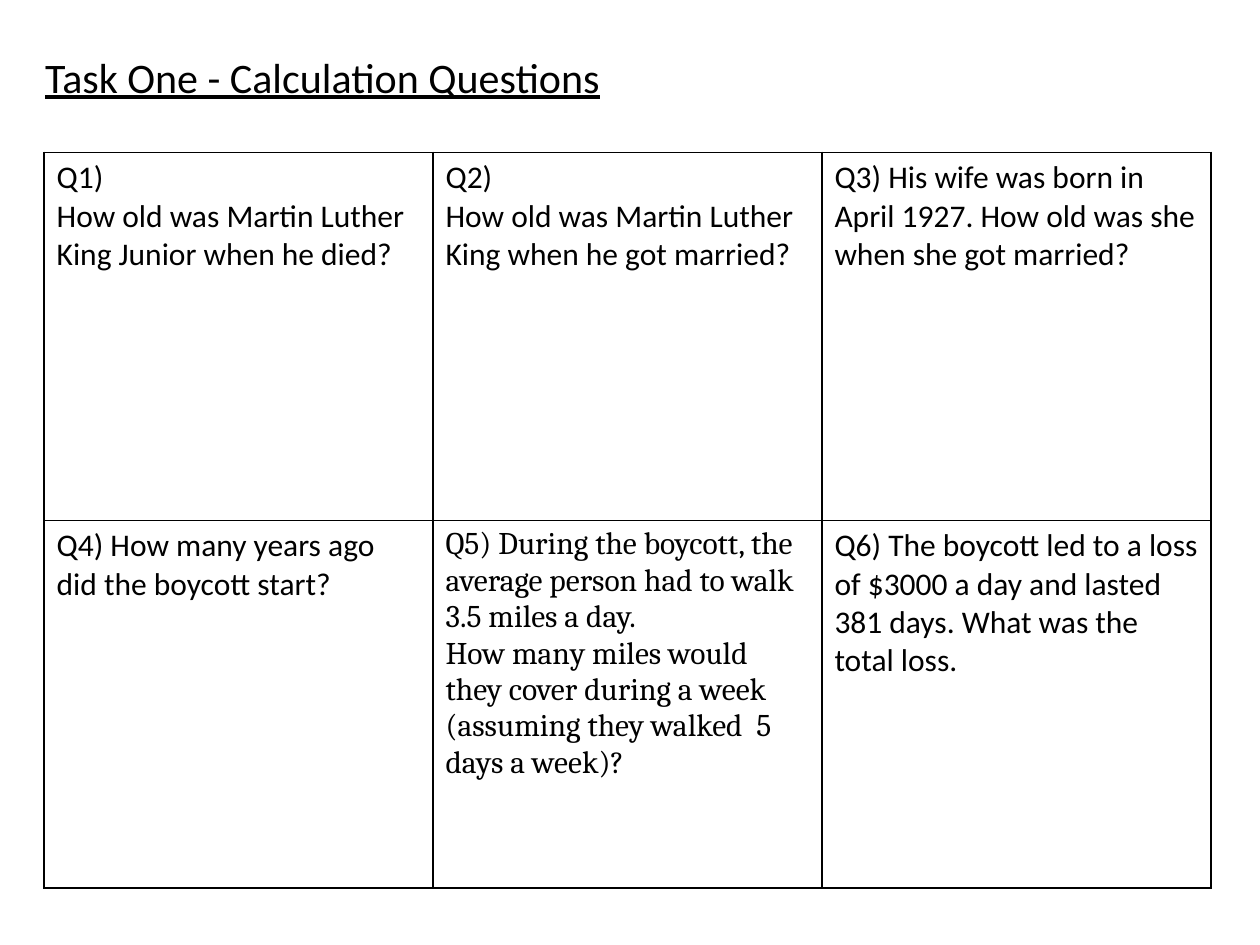
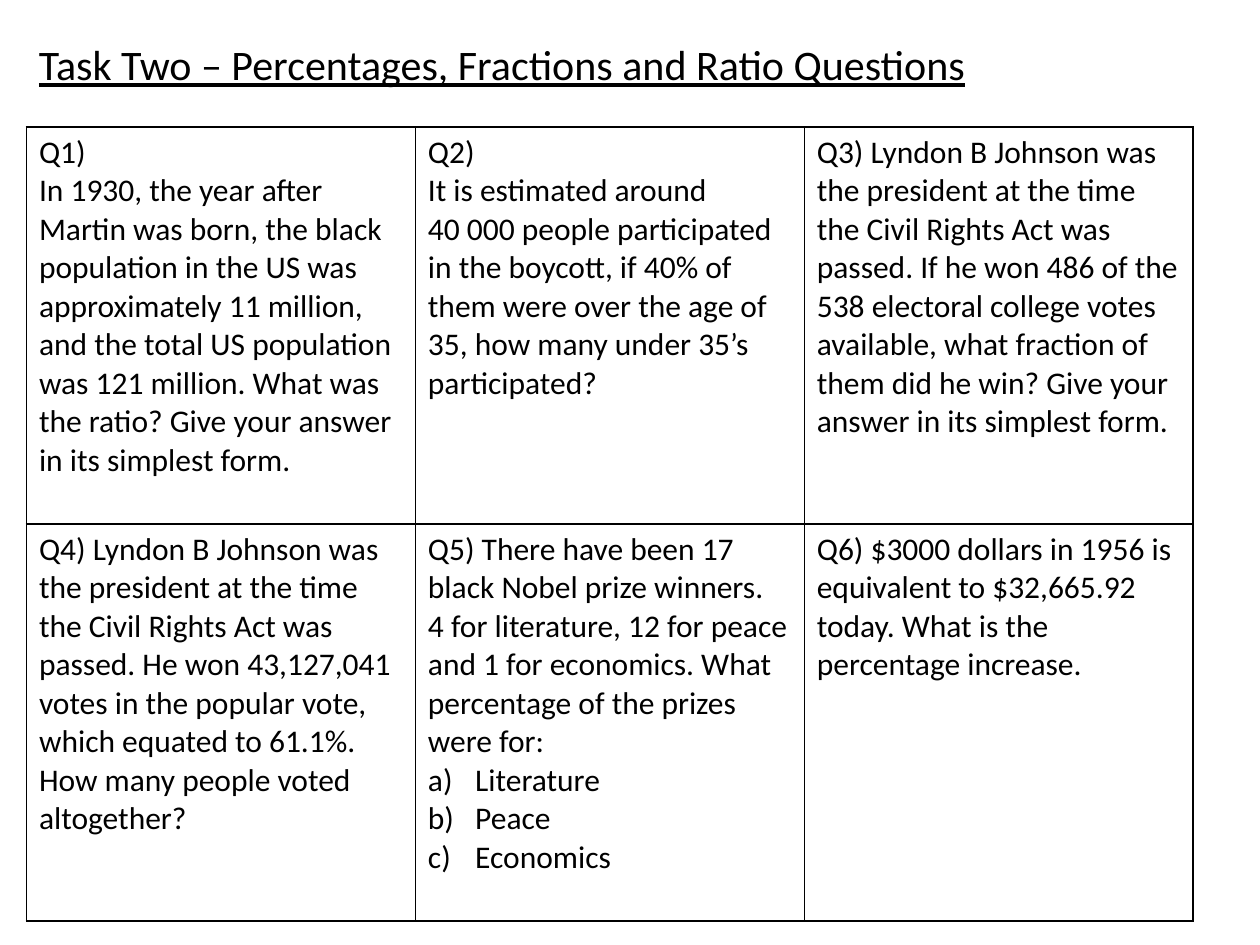
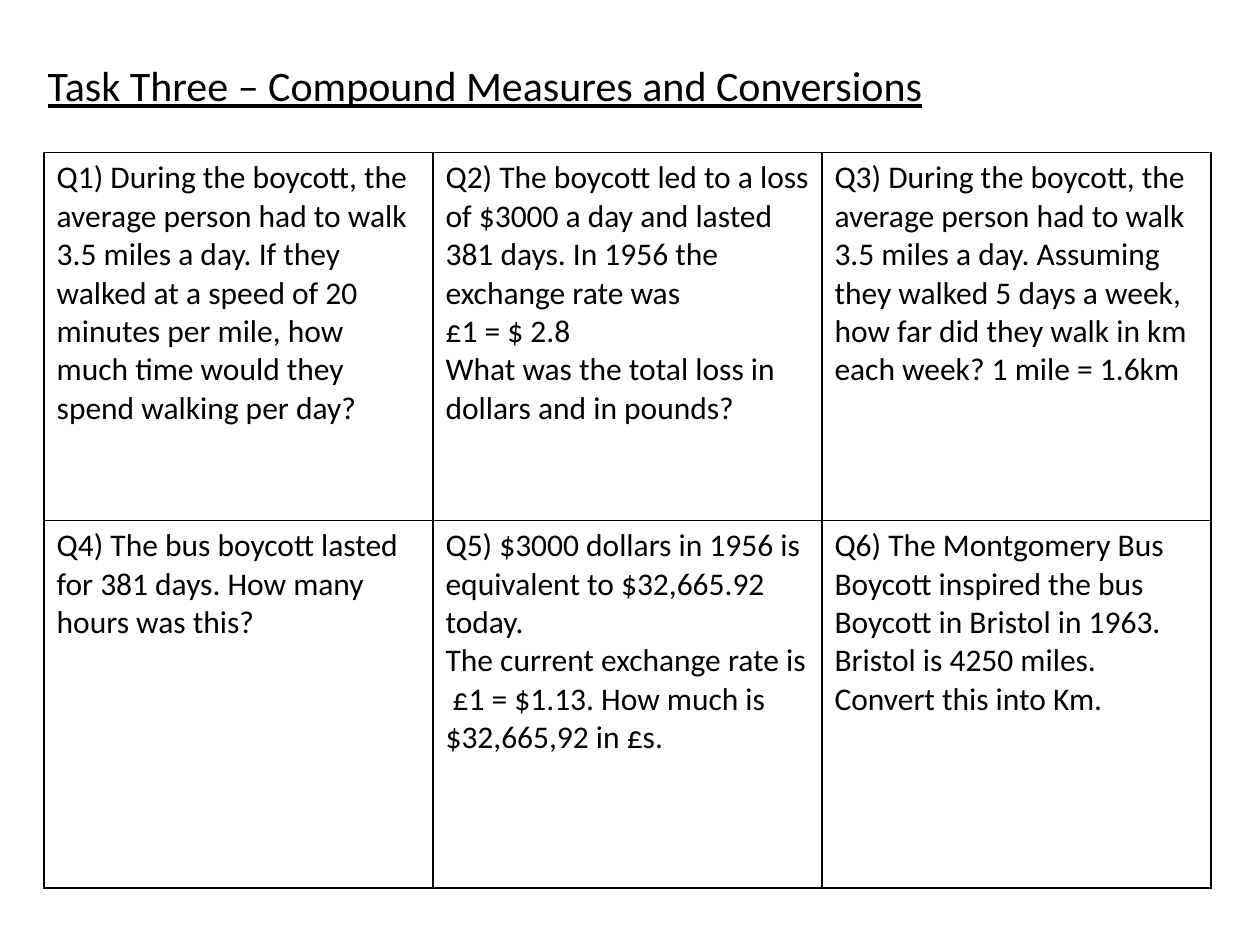
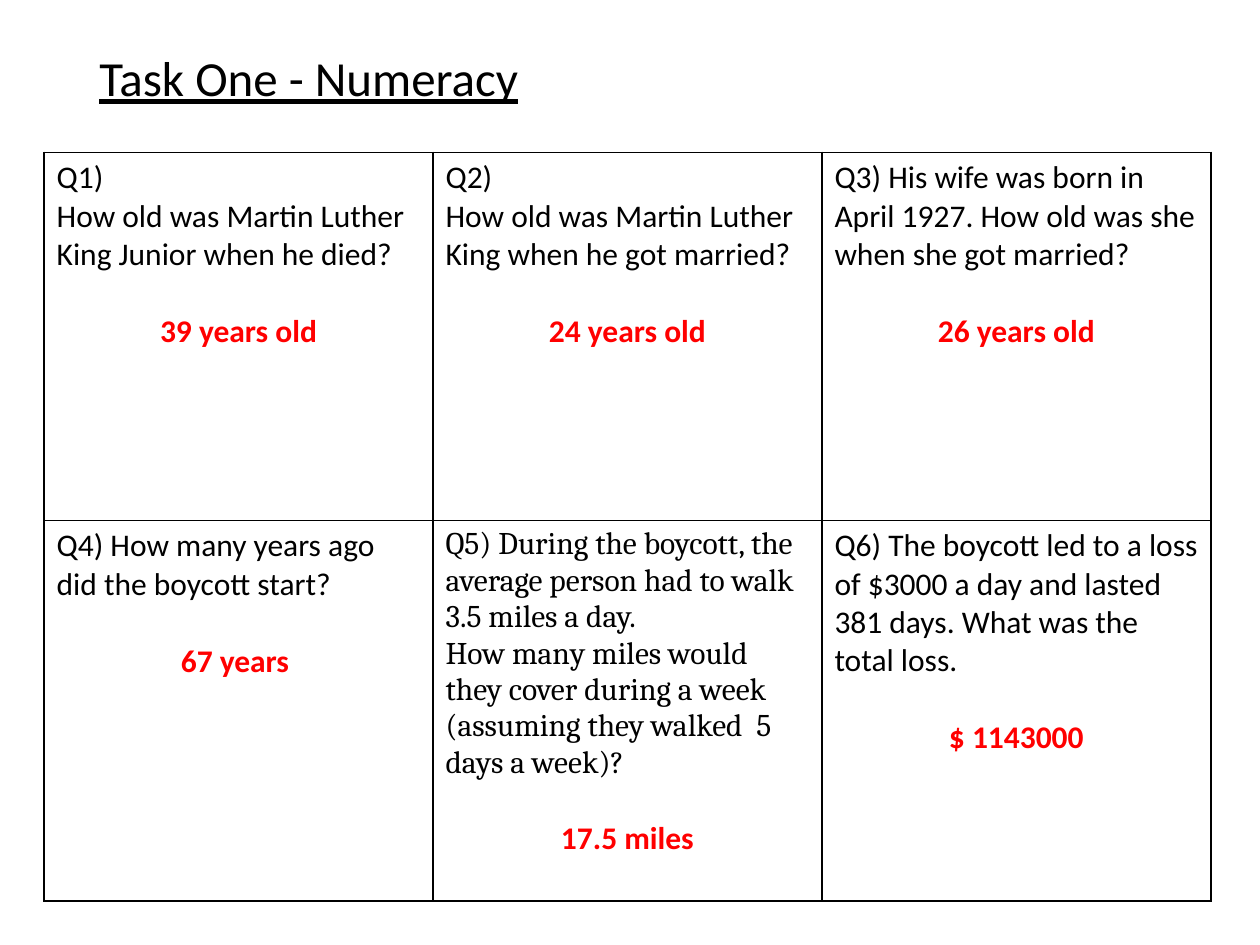
from dataclasses import dataclass

from lxml import etree
from pptx import Presentation
from pptx import util as u
from pptx.dml.color import RGBColor
from pptx.enum import text
from pptx.oxml import ns


@dataclass(frozen=True)
class Theme:
    """Colours, fonts and type sizes shared by all slides."""
    ink: str = "000000"
    answer: str = "FF0000"
    paper: str = "FFFFFF"
    sans: str = "Calibri"
    serif: str = "Cambria"
    title: int = 24
    big_title: int = 28
    body: int = 18
    answer_gap: int = 22
    border: float = 1
    list_indent: float = 3.75


THEME = Theme()
COLS, ROWS = 100, 75


def write(tf, words, size=THEME.body, font=THEME.sans, color=THEME.ink, bold=False,
          underline=False, align=text.PP_ALIGN.LEFT, leading=None, before=0):
    """Add a formatted paragraph, filling the first one while it is empty."""
    p = tf.paragraphs[0] if not tf.text else tf.add_paragraph()
    p.alignment = align
    p.space_before = u.Pt(before)
    if leading:
        p.line_spacing = leading
    r = p.add_run()
    r.text = words
    r.font.size = u.Pt(size)
    r.font.name = font
    r.font.bold = bold
    r.font.underline = underline
    r.font.color.rgb = RGBColor.from_string(color)
    return p


class Deck:
    """Holds the style and the current slide, placed on a 100 by 75 grid."""

    def __init__(self, theme):
        """Open an empty deck of 10 by 7.5 inches."""
        self.theme = theme
        self.prs = Presentation()
        self.prs.slide_width, self.prs.slide_height = u.Inches(10), u.Inches(7.5)
        self.slide = None

    def x(self, cols):
        """Turn grid columns into a length."""
        return u.Emu(round(self.prs.slide_width * cols / COLS))

    def y(self, rows):
        """Turn grid rows into a length."""
        return u.Emu(round(self.prs.slide_height * rows / ROWS))

    def new_slide(self):
        """Start a blank slide."""
        self.slide = self.prs.slides.add_slide(self.prs.slide_layouts[6])
        fill = self.slide.background.fill
        fill.solid()
        fill.fore_color.rgb = RGBColor.from_string(self.theme.paper)

    def title(self, words, left, top, size):
        """Add the underlined task title."""
        sp = self.slide.shapes.add_textbox(self.x(left), self.y(top), self.x(86.2), self.y(4.8))
        tf = sp.text_frame
        tf.word_wrap = True
        tf.vertical_anchor = text.MSO_ANCHOR.MIDDLE
        write(tf, words, size=size, underline=True, leading=0.9)

    def table(self, cells, left, top, heights, width=92.6, per_row=3):
        """Add a ruled grid of questions, row by row."""
        frame = self.slide.shapes.add_table(len(heights), per_row, self.x(left), self.y(top),
                                            self.x(width), self.y(sum(heights)))
        tbl = frame.table
        tbl.first_row = tbl.horz_banding = False
        for row, height in zip(tbl.rows, heights):
            row.height = self.y(height)
        for i, paras in enumerate(cells):
            self.cell(tbl.cell(*divmod(i, per_row)), paras)

    def cell(self, cell, paras):
        """Fill one cell with paragraphs and rule its four sides."""
        cell.fill.background()
        for words, fmt in paras:
            fmt = dict(fmt)
            listed = fmt.pop("listed", False)
            p = write(cell.text_frame, words, **fmt)
            if listed:
                self.letter(p)
        tc_pr = cell._tc.get_or_add_tcPr()
        for i, side in enumerate(("lnL", "lnR", "lnT", "lnB")):
            ln = etree.Element(ns.qn(f"a:{side}"), w=str(u.Pt(self.theme.border)))
            fill = etree.SubElement(ln, ns.qn("a:solidFill"))
            etree.SubElement(fill, ns.qn("a:srgbClr"), val=self.theme.ink)
            tc_pr.insert(i, ln)

    def letter(self, p):
        """Number a paragraph a), b), c) with a hanging indent."""
        p_pr = p._p.get_or_add_pPr()
        indent = self.x(self.theme.list_indent)
        p_pr.set("marL", str(indent))
        p_pr.set("indent", str(-indent))
        etree.SubElement(p_pr, ns.qn("a:buFont"), typeface="+mj-lt")
        etree.SubElement(p_pr, ns.qn("a:buAutoNum"), type="alphaLcParenR")


def ask(*lines, **fmt):
    """Return the paragraphs of one question."""
    return [(line, fmt) for line in lines]


def reply(words):
    """Return the paragraph of one answer."""
    return [(words, dict(color=THEME.answer, bold=True, align=text.PP_ALIGN.CENTER,
                         before=THEME.answer_gap))]


CALCULATION = [
    ask("Q1)", "How old was Martin Luther King Junior when he died?"),
    ask("Q2)", "How old was Martin Luther King when he got married?"),
    ask("Q3) His wife was born in April 1927. How old was she when she got married?"),
    ask("Q4) How many years ago did the boycott start?"),
    ask("Q5) During the boycott, the average person had to walk 3.5 miles a day.",
        "How many miles would they cover during a week (assuming they walked  5 days a week)?",
        font=THEME.serif),
    ask("Q6) The boycott led to a loss of $3000 a day and lasted 381 days. "
        "What was the total loss."),
]
ANSWERS = ["39 years old", "24 years old", "26 years old", "67 years ", "17.5 miles", "$ 1143000"]
PERCENTAGES = [
    ask("Q1)",
        "In 1930, the year after Martin was born, the black population in the US was "
        "approximately 11 million, and the total US population was 121 million. "
        "What was the ratio? Give your answer in its simplest form."),
    ask("Q2)", "It is estimated around",
        "40 000 people participated in the boycott, if 40% of them were over the age of 35, "
        "how many under 35’s participated?"),
    ask("Q3) Lyndon B Johnson was the president at the time the Civil Rights Act was passed. "
        "If he won 486 of the 538 electoral college votes available, what fraction of them "
        "did he win? Give your answer in its simplest form."),
    ask("Q4) Lyndon B Johnson was the president at the time the Civil Rights Act was passed. "
        "He won 43,127,041 votes in the popular vote, which equated to 61.1%. "
        "How many people voted altogether?"),
    ask("Q5) There have been 17 black Nobel prize winners.",
        "4 for literature, 12 for peace and 1 for economics. "
        "What percentage of the prizes were for:")
    + ask("Literature", "Peace", "Economics", listed=True),
    ask("Q6) $3000 dollars in 1956 is equivalent to $32,665.92 today. "
        "What is the percentage increase."),
]
MEASURES = [
    ask("Q1) During the boycott, the average person had to walk 3.5 miles a day. If they walked "
        "at a speed of 20 minutes per mile, how much time would they spend walking per day?"),
    ask("Q2) The boycott led to a loss of $3000 a day and lasted 381 days. "
        "In 1956 the exchange rate was",
        "£1 = $ 2.8", "What was the total loss in dollars and in pounds?"),
    ask("Q3) During the boycott, the average person had to walk 3.5 miles a day. Assuming they "
        "walked 5 days a week, how far did they walk in km each week? 1 mile = 1.6km"),
    ask("Q4) The bus boycott lasted for 381 days. How many hours was this?"),
    ask("Q5) $3000 dollars in 1956 is equivalent to $32,665.92 today.",
        "The current exchange rate is  £1 = $1.13. How much is $32,665,92 in £s."),
    ask("Q6) The Montgomery Bus Boycott inspired the bus Boycott in Bristol in 1963.",
        "Bristol is 4250 miles. Convert this into Km."),
]


def main():
    """Build the four task slides."""
    deck = Deck(THEME)
    solved = [q + reply(a) for q, a in zip(CALCULATION, ANSWERS)]
    usual, even = (3.5, 12.1), (29.2, 29.2)
    tasks = [
        ("Task One - Calculation Questions", (2.6, 3.9), THEME.title, CALCULATION, usual, even),
        ("Task Two – Percentages, Fractions and Ratio Questions", (2.1, 2.9), THEME.title,
         PERCENTAGES, (2.1, 10.1), (31.5, 31.5)),
        ("Task Three – Compound Measures and Conversions", (2.8, 4.6), THEME.title,
         MEASURES, usual, even),
        ("Task One - Numeracy", (6.9, 4), THEME.big_title, solved, usual, (29.2, 30.2)),
    ]
    for words, title_at, size, cells, table_at, heights in tasks:
        deck.new_slide()
        deck.title(words, *title_at, size)
        deck.table(cells, *table_at, heights)
    deck.prs.save("out.pptx")


if __name__ == "__main__":
    main()
